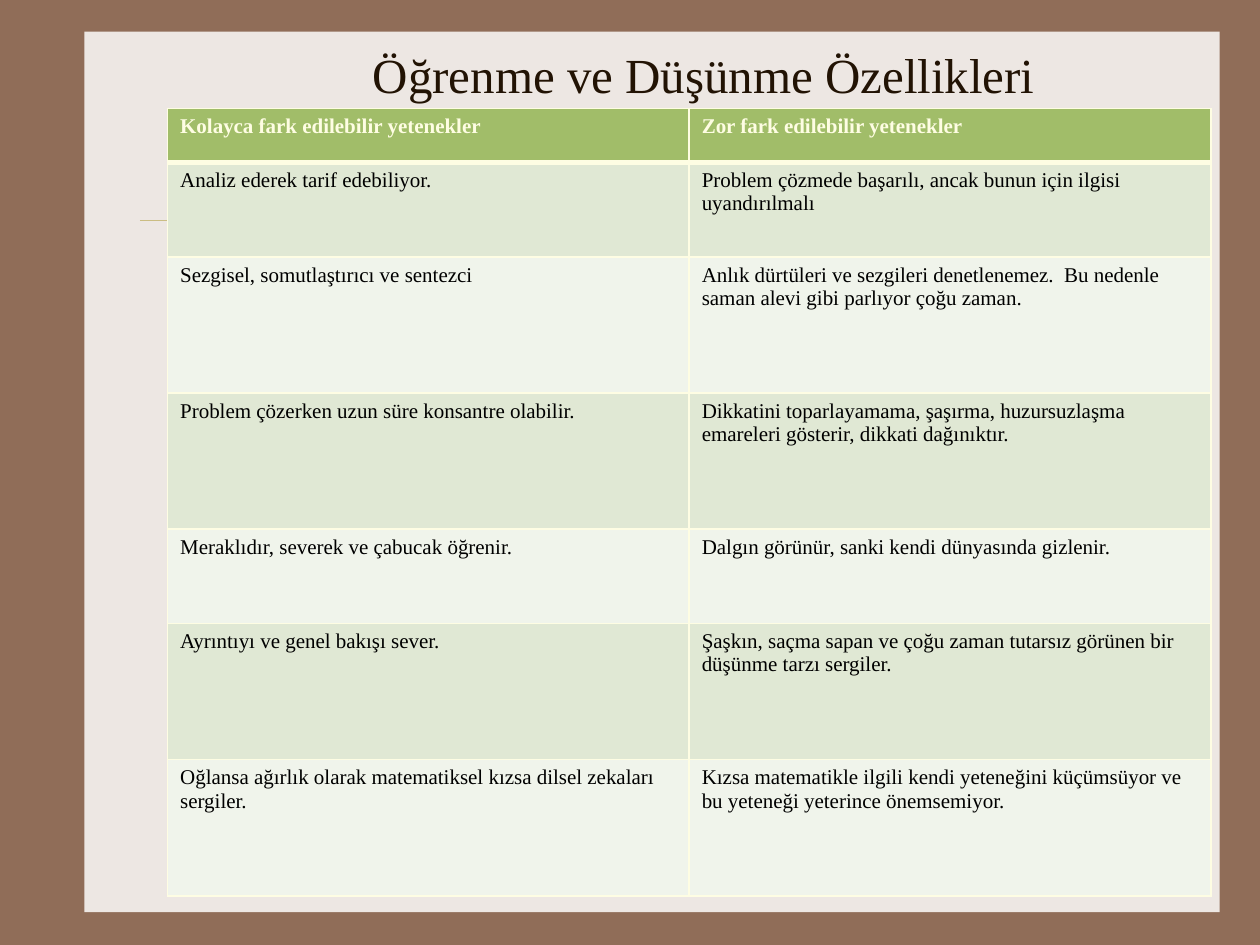
from dataclasses import dataclass

from lxml import etree
from pptx import Presentation
from pptx.dml.color import RGBColor
from pptx.enum import shapes, text
from pptx.oxml import ns
from pptx.util import Inches, Pt


@dataclass(frozen=True)
class Theme:
    font: str = "Times New Roman"
    title_size: float = 28
    cell_size: float = 12
    frame: str = "906D58"
    panel: str = "EDE7E3"
    rule: str = "CBBD83"
    title: str = "221304"
    header_fill: str = "A1BD69"
    header_text: str = "FEFDE3"
    border: str = "FEFDE3"
    body_text: str = "000000"
    bands: tuple = ("E0E8D4", "F0F4EB")


THEME = Theme()
TITLE = "Öğrenme ve Düşünme Özellikleri"
ROWS = [
    ("Kolayca fark edilebilir yetenekler", "Zor fark edilebilir yetenekler"),
    ("Analiz ederek tarif edebiliyor.",
     "Problem çözmede başarılı, ancak bunun için ilgisi uyandırılmalı"),
    ("Sezgisel, somutlaştırıcı ve sentezci",
     "Anlık dürtüleri ve sezgileri denetlenemez.  Bu nedenle saman alevi gibi "
     "parlıyor çoğu zaman."),
    ("Problem çözerken uzun süre konsantre olabilir.",
     "Dikkatini toparlayamama, şaşırma, huzursuzlaşma emareleri gösterir, "
     "dikkati dağınıktır."),
    ("Meraklıdır, severek ve çabucak öğrenir.",
     "Dalgın görünür, sanki kendi dünyasında gizlenir."),
    ("Ayrıntıyı ve genel bakışı sever.",
     "Şaşkın, saçma sapan ve çoğu zaman tutarsız görünen bir düşünme tarzı sergiler."),
    ("Oğlansa ağırlık olarak matematiksel kızsa dilsel zekaları sergiler.",
     "Kızsa matematikle ilgili kendi yeteneğini küçümsüyor ve bu yeteneği "
     "yeterince önemsemiyor."),
]
ROW_HEIGHTS = (0.43, 0.75, 1.08, 1.08, 0.75, 1.08, 1.08)
COLUMN_WIDTH = 4.14


def paint(fill, color):
    fill.solid()
    fill.fore_color.rgb = RGBColor.from_string(color)


def write(tf, content, size, color, align, bold=False):
    tf.text = content
    p = tf.paragraphs[0]
    p.alignment = align
    font = p.runs[0].font
    font.name, font.size, font.bold = THEME.font, Pt(size), bold
    font.color.rgb = RGBColor.from_string(color)


def add_panel(slide):
    sp = slide.shapes.add_shape(shapes.MSO_SHAPE.RECTANGLE, Inches(0.67), Inches(0.25),
                                Inches(9.01), Inches(6.99))
    sp.shadow.inherit = False
    paint(sp.fill, THEME.panel)
    sp.line.fill.background()


def add_rule(slide):
    line = slide.shapes.add_connector(shapes.MSO_CONNECTOR.STRAIGHT, Inches(1.11),
                                      Inches(1.75), Inches(9.5), Inches(1.75))
    line.line.width = Pt(0.25)
    line.line.color.rgb = RGBColor.from_string(THEME.rule)
    etree.SubElement(line._element.spPr, ns.qn("a:effectLst"))


def add_title(slide):
    box = slide.shapes.add_textbox(Inches(1.64), Inches(0), Inches(7.89), Inches(1.17))
    tf = box.text_frame
    tf.word_wrap = True
    tf.vertical_anchor = text.MSO_ANCHOR.MIDDLE
    write(tf, TITLE, THEME.title_size, THEME.title, text.PP_ALIGN.CENTER)


def set_borders(cell, top, bottom):
    """Draw all four borders; top and bottom are widths in points."""
    tc_pr = cell._tc.get_or_add_tcPr()
    widths = {"lnL": 1, "lnR": 1, "lnT": top, "lnB": bottom}
    for i, (tag, width) in enumerate(widths.items()):
        ln = etree.Element(ns.qn(f"a:{tag}"), w=str(Pt(width)))
        fill = etree.SubElement(ln, ns.qn("a:solidFill"))
        etree.SubElement(fill, ns.qn("a:srgbClr"), val=THEME.border)
        tc_pr.insert(i, ln)


def add_ability_table(slide):
    columns = len(ROWS[0])
    table = slide.shapes.add_table(
        len(ROWS), columns, Inches(1.33), Inches(0.86),
        Inches(COLUMN_WIDTH * columns), Inches(sum(ROW_HEIGHTS))).table
    for column in table.columns:
        column.width = Inches(COLUMN_WIDTH)
    for i, (row, height) in enumerate(zip(ROWS, ROW_HEIGHTS)):
        table.rows[i].height = Inches(height)
        header = i == 0
        fill = THEME.header_fill if header else THEME.bands[(i - 1) % 2]
        color = THEME.header_text if header else THEME.body_text
        for j, content in enumerate(row):
            cell = table.cell(i, j)
            paint(cell.fill, fill)
            set_borders(cell, top=3 if i == 1 else 1, bottom=3 if header else 1)
            write(cell.text_frame, content, THEME.cell_size, color,
                  text.PP_ALIGN.LEFT, bold=header)


def main():
    prs = Presentation()
    prs.slide_width, prs.slide_height = Inches(10), Inches(7.5)
    slide = prs.slides.add_slide(prs.slide_layouts[6])
    paint(slide.background.fill, THEME.frame)
    add_panel(slide)
    add_rule(slide)
    add_title(slide)
    add_ability_table(slide)
    prs.save("out.pptx")


if __name__ == "__main__":
    main()
